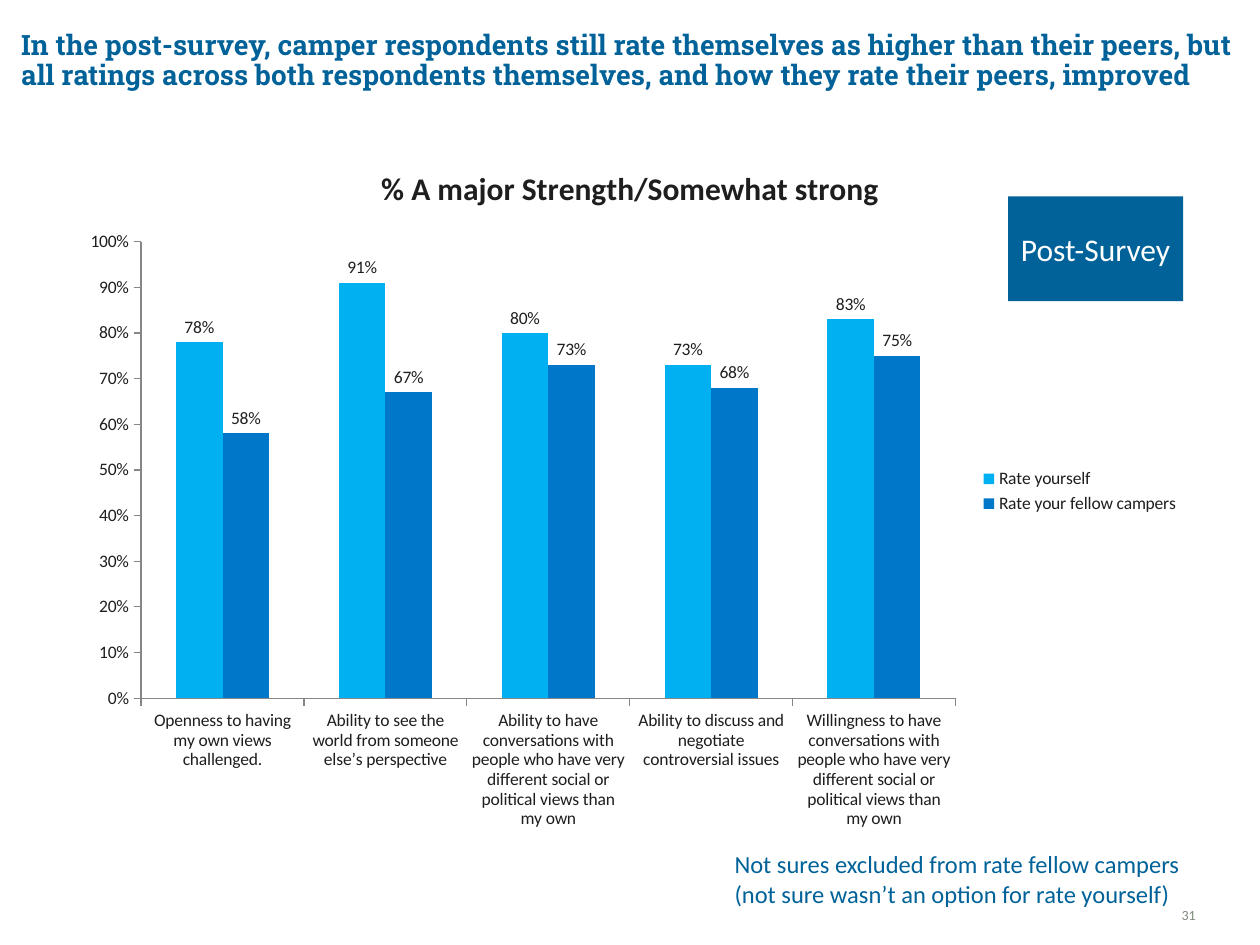
from pptx import Presentation
from pptx.chart.data import CategoryChartData
from pptx.dml.color import RGBColor
from pptx.enum.chart import XL_CHART_TYPE, XL_LABEL_POSITION, XL_LEGEND_POSITION, XL_TICK_MARK
from pptx.enum.shapes import MSO_SHAPE
from pptx.enum.text import MSO_ANCHOR, PP_ALIGN
from pptx.util import Inches, Pt

COLUMN_CLUSTERED = XL_CHART_TYPE.COLUMN_CLUSTERED
OUTSIDE_END = XL_LABEL_POSITION.OUTSIDE_END
LEGEND_RIGHT = XL_LEGEND_POSITION.RIGHT
TICK_OUTSIDE = XL_TICK_MARK.OUTSIDE
RECTANGLE = MSO_SHAPE.RECTANGLE
TOP, MIDDLE, BOTTOM = MSO_ANCHOR.TOP, MSO_ANCHOR.MIDDLE, MSO_ANCHOR.BOTTOM
LEFT, CENTER, RIGHT = PP_ALIGN.LEFT, PP_ALIGN.CENTER, PP_ALIGN.RIGHT

NAVY = RGBColor(0x00, 0x62, 0x98)
SKY = RGBColor(0x00, 0xB0, 0xF0)
BLUE = RGBColor(0x00, 0x77, 0xC8)
INK = RGBColor(0x1E, 0x1E, 0x1E)
SAGE = RGBColor(0x7E, 0x8B, 0x7A)
AXIS_GRAY = RGBColor(0x86, 0x86, 0x86)
WHITE = RGBColor(0xFF, 0xFF, 0xFF)

presentation = Presentation()
presentation.slide_width = Inches(10)
presentation.slide_height = Inches(7.5)
slide = presentation.slides.add_slide(presentation.slide_layouts[6])
slide.background.fill.solid()
slide.background.fill.fore_color.rgb = WHITE


def write(shape, text, size, color, align=LEFT, anchor=TOP, inset=True, font="Calibri", bold=False):
    frame = shape.text_frame
    frame.word_wrap = True
    frame.vertical_anchor = anchor
    if not inset:
        frame.margin_left = frame.margin_right = frame.margin_top = frame.margin_bottom = 0
    paragraph = frame.paragraphs[0]
    paragraph.text = text
    paragraph.alignment = align
    run_font = paragraph.runs[0].font
    run_font.name, run_font.size, run_font.bold = font, Pt(size), bold
    run_font.color.rgb = color
    return paragraph


# Headline
headline = slide.shapes.add_textbox(Inches(0.07), Inches(0.2), Inches(10), Inches(0.7))
write(headline, "In the post-survey, camper respondents still rate themselves as higher than their peers, "
      "but all ratings across both respondents themselves, and how they rate their peers, improved",
      16, NAVY, font="Roboto Slab", bold=True).line_spacing = 0.9

# Page number
page_number = slide.shapes.add_textbox(Inches(8.97), Inches(7.07), Inches(0.52), Inches(0.26))
write(page_number, "31", 8, SAGE, RIGHT, BOTTOM, inset=False)

# Ratings chart
ratings = CategoryChartData(number_format="0%")
ratings.categories = [
    "Openness to having my own views challenged.",
    "Ability to see the world from someone else’s perspective",
    "Ability to have conversations with people who have very different social or political views than my own",
    "Ability to discuss and negotiate controversial issues",
    "Willingness to have conversations with people who have very different social or political views than my own",
]
ratings.add_series("Rate yourself", (0.78, 0.91, 0.8, 0.73, 0.83))
ratings.add_series("Rate your fellow campers", (0.58, 0.67, 0.73, 0.68, 0.75))
chart = slide.shapes.add_chart(COLUMN_CLUSTERED, Inches(0.54), Inches(1.11),
                               Inches(8.92), Inches(5.58), ratings).chart
chart.font.name, chart.font.size = "Calibri", Pt(10)
chart.font.color.rgb = INK

chart.has_title = True
title = chart.chart_title.text_frame.paragraphs[0]
title.text = "% A major Strength/Somewhat strong"
title_font = title.runs[0].font
title_font.name, title_font.size, title_font.bold = "Calibri", Pt(18), True
title_font.color.rgb = INK

chart.has_legend = True
chart.legend.position = LEGEND_RIGHT
chart.legend.include_in_layout = False

# Axes
for axis in (chart.category_axis, chart.value_axis):
    axis.has_major_gridlines = False
    axis.major_tick_mark = TICK_OUTSIDE
    axis.format.line.color.rgb = AXIS_GRAY
    axis.format.line.width = Pt(0.75)
chart.value_axis.minimum_scale, chart.value_axis.maximum_scale = 0, 1
chart.value_axis.major_unit = 0.1
chart.value_axis.tick_labels.number_format = "0%"
chart.value_axis.tick_labels.number_format_is_linked = False

# Columns and their labels
plot = chart.plots[0]
plot.gap_width, plot.overlap = 150, 0
plot.vary_by_categories = False
for series, color in zip(plot.series, (SKY, BLUE)):
    series.format.fill.solid()
    series.format.fill.fore_color.rgb = color
    labels = series.data_labels
    labels.show_value = True
    labels.number_format, labels.number_format_is_linked = "0%", False
    labels.position = OUTSIDE_END

# Survey tag
tag = slide.shapes.add_shape(RECTANGLE, Inches(8), Inches(1.56), Inches(1.39), Inches(0.83))
tag.shadow.inherit = False
tag.fill.solid()
tag.fill.fore_color.rgb = NAVY
tag.line.fill.background()
write(tag, "Post-Survey", 18, WHITE, CENTER, MIDDLE)

# Footnote
footnote = slide.shapes.add_textbox(Inches(5.83), Inches(6.74), Inches(3.67), Inches(0.47))
write(footnote, "Not sures excluded from rate fellow campers (not sure wasn’t an option for rate yourself)",
      14, NAVY, inset=False)

presentation.save("out.pptx")
